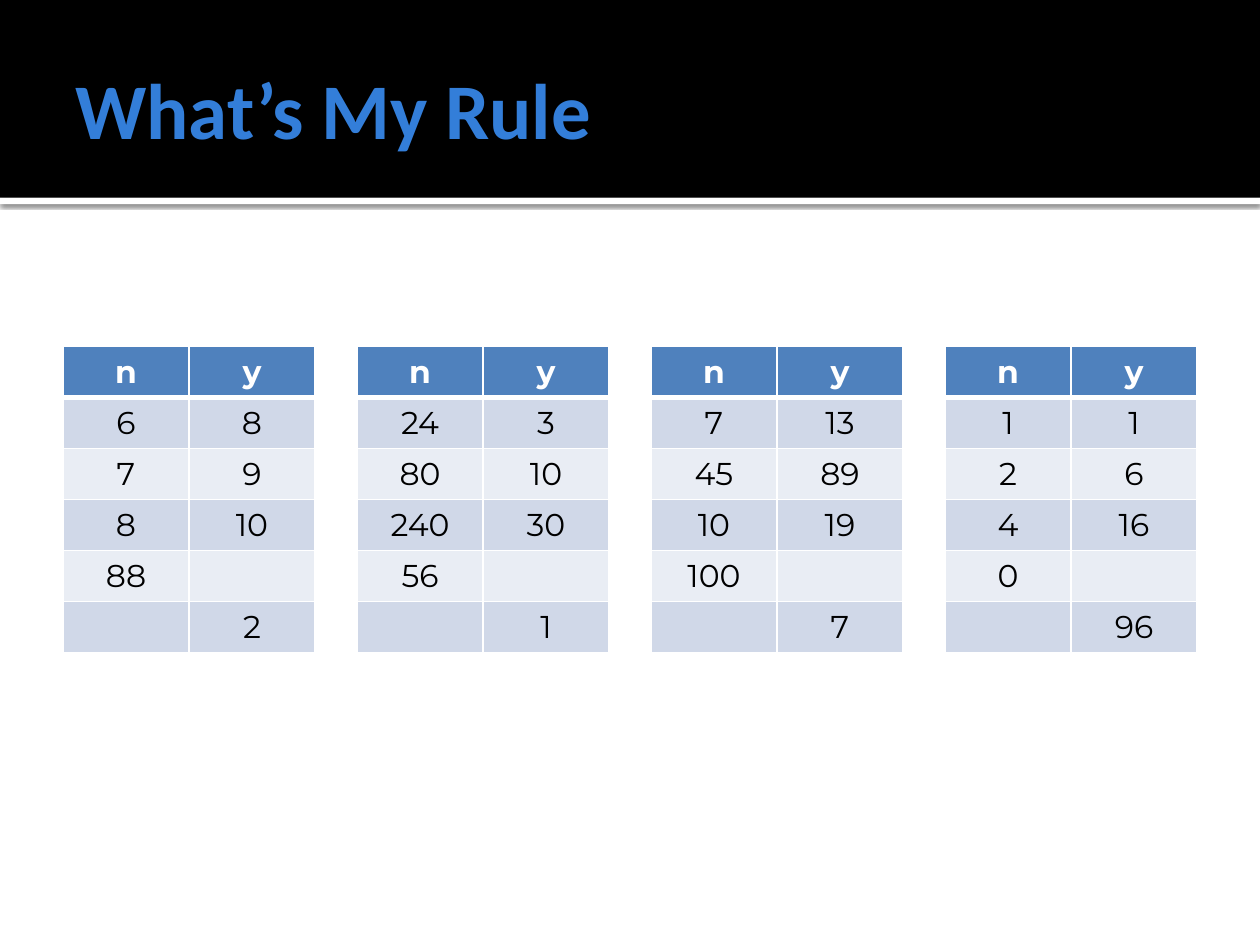
import pptx
import pptx.util
import pptx.dml.color
import pptx.enum.shapes
import pptx.enum.text
import pptx.oxml
import pptx.oxml.ns

COLORS = {
    "white": "FFFFFF", "black": "000000", "title": "337ED9",
    "head": "4F81BD", "odd": "D0D8E8", "even": "E9EDF4",
}
NS = pptx.oxml.ns.nsdecls("a")
COLS, ROWS = 20, 30  # slide grid


class Deck:
    """Holds the style and the current slide; lengths are grid units."""

    def __init__(self):
        self.prs = pptx.Presentation()
        self.prs.slide_width = pptx.util.Inches(10)
        self.prs.slide_height = pptx.util.Inches(7.5)
        self.slide = self.prs.slides.add_slide(self.prs.slide_layouts[6])

    def col(self, n):
        return round(self.prs.slide_width * n / COLS)

    def row(self, n):
        return round(self.prs.slide_height * n / ROWS)

    def box(self, x, y, w, h):
        return self.col(x), self.row(y), self.col(w), self.row(h)

    def paint(self, fill, color):
        fill.solid()
        fill.fore_color.rgb = pptx.dml.color.RGBColor.from_string(COLORS[color])

    def label(self, par, text, font, size, color, bold):
        run = par.add_run()
        run.text = text
        run.font.name = font
        run.font.size = pptx.util.Pt(size)
        run.font.bold = bold
        self.paint(run.font.fill, color)

    def band(self, x, y, w, h, color, shade=False):
        kind = pptx.enum.shapes.MSO_SHAPE.RECTANGLE
        shape = self.slide.shapes.add_shape(kind, *self.box(x, y, w, h))
        shape.shadow.inherit = False
        self.paint(shape.fill, color)
        shape.line.fill.background()
        if shade:
            effect = shape._element.spPr.find(pptx.oxml.ns.qn("a:effectLst"))
            effect.append(pptx.oxml.parse_xml(
                f'<a:outerShdw {NS} blurRad="31750" dist="10160" dir="5400000" '
                f'rotWithShape="0"><a:srgbClr val="{COLORS["black"]}">'
                '<a:alpha val="60000"/></a:srgbClr></a:outerShdw>'))

    def title(self, x, y, w, h, text):
        frame = self.slide.shapes.add_textbox(*self.box(x, y, w, h)).text_frame
        frame.word_wrap = True
        frame.vertical_anchor = pptx.enum.text.MSO_ANCHOR.MIDDLE
        frame.margin_left = pptx.util.Inches(0.1)
        frame.margin_right = pptx.util.Inches(0.05)
        self.label(frame.paragraphs[0], text, "Calibri", 45, "title", True)

    def border(self, cell, top, low):
        props = cell._tc.get_or_add_tcPr()
        sides = {"lnL": 1, "lnR": 1, "lnT": top, "lnB": low}
        for at, (side, width) in enumerate(sides.items()):
            props.insert(at, pptx.oxml.parse_xml(
                f'<a:{side} {NS} w="{pptx.util.Pt(width)}"><a:solidFill>'
                f'<a:srgbClr val="{COLORS["white"]}"/></a:solidFill></a:{side}>'))

    def table(self, x, y, w, h, data):
        frame = self.slide.shapes.add_table(
            len(data), len(data[0]), *self.box(x, y, w, h))
        for r, line in enumerate(data):
            head = r == 0
            fill = "head" if head else "odd" if r % 2 else "even"
            for c, text in enumerate(line):
                cell = frame.table.cell(r, c)
                self.paint(cell.fill, fill)
                # The thick rule under the header is shared with the next row
                self.border(cell, 3 if r == 1 else 1, 3 if head else 1)
                if text:
                    par = cell.text_frame.paragraphs[0]
                    par.alignment = pptx.enum.text.PP_ALIGN.CENTER
                    self.label(par, text, "Montserrat", 18,
                               "white" if head else "black", head)


# Pairs of input n and output y, one list per table
RULES = [
    [("6", "8"), ("7", "9"), ("8", "10"), ("88", ""), ("", "2")],
    [("24", "3"), ("80", "10"), ("240", "30"), ("56", ""), ("", "1")],
    [("7", "13"), ("45", "89"), ("10", "19"), ("100", ""), ("", "7")],
    [("1", "1"), ("2", "6"), ("4", "16"), ("0", ""), ("", "96")],
]


def main():
    deck = Deck()

    # Title band
    deck.band(0, 6.28, COLS, 0.2, "white", shade=True)
    deck.band(0, 0, COLS, 6.28, "black")
    deck.title(1, 0.68, 18, 5.48, "What’s My Rule")

    # Tables spread evenly between the side margins
    edge, wide, count = 1, 4, len(RULES)
    step = (COLS - 2 * edge - wide) / (count - 1)
    for i, pairs in enumerate(RULES):
        deck.table(edge + i * step, 11, wide, 9.72, [("n", "y"), *pairs])

    deck.prs.save("out.pptx")


if __name__ == "__main__":
    main()
